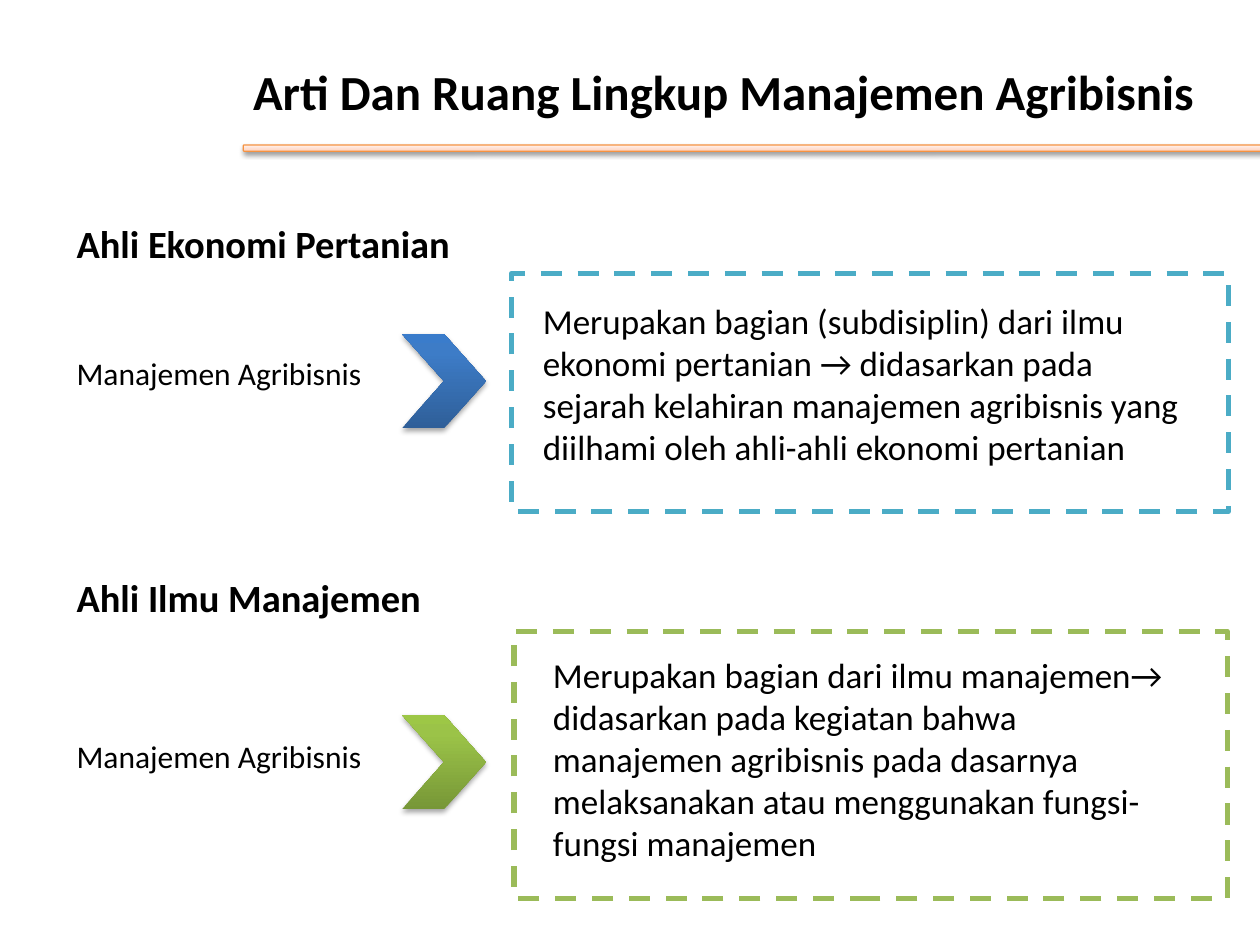
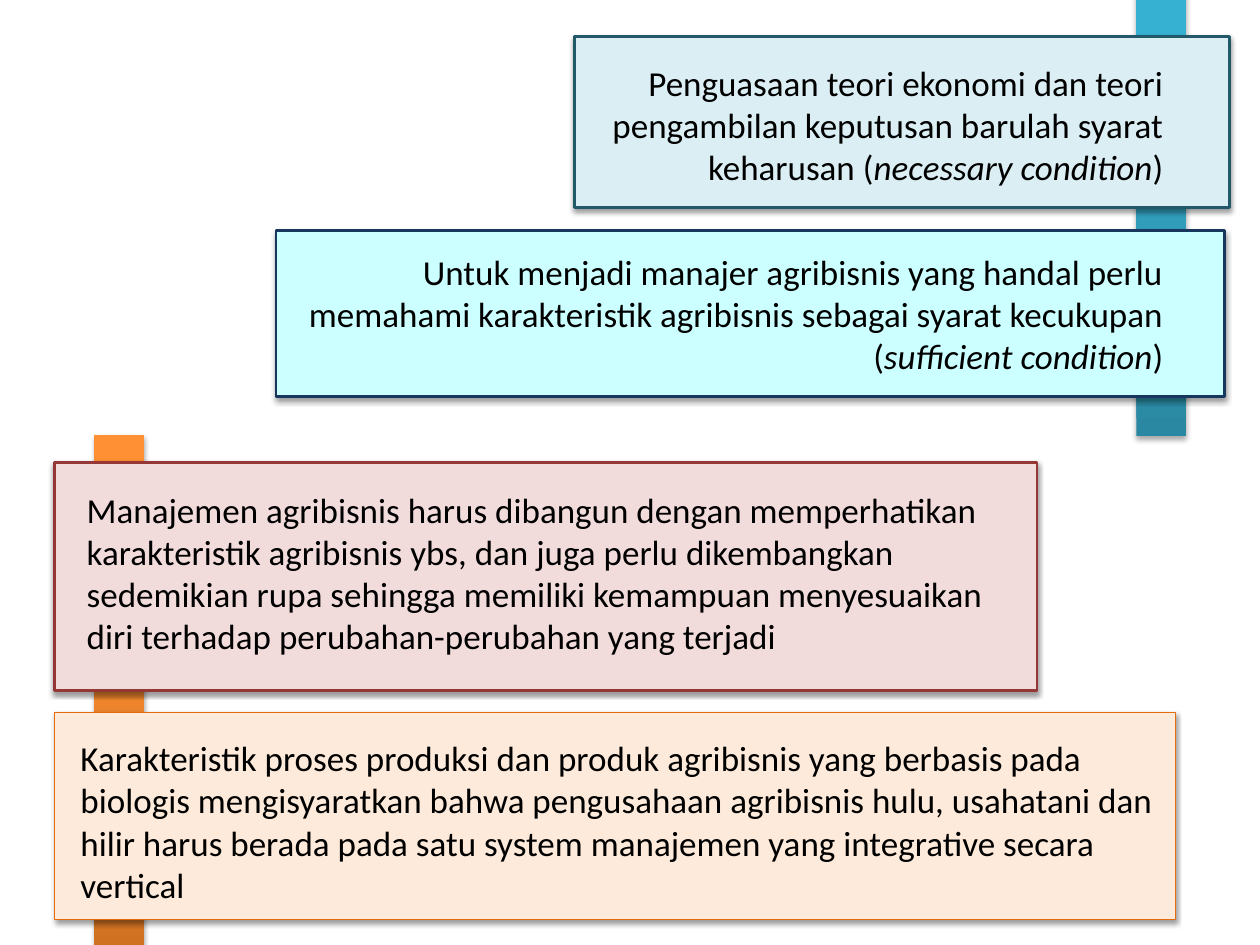
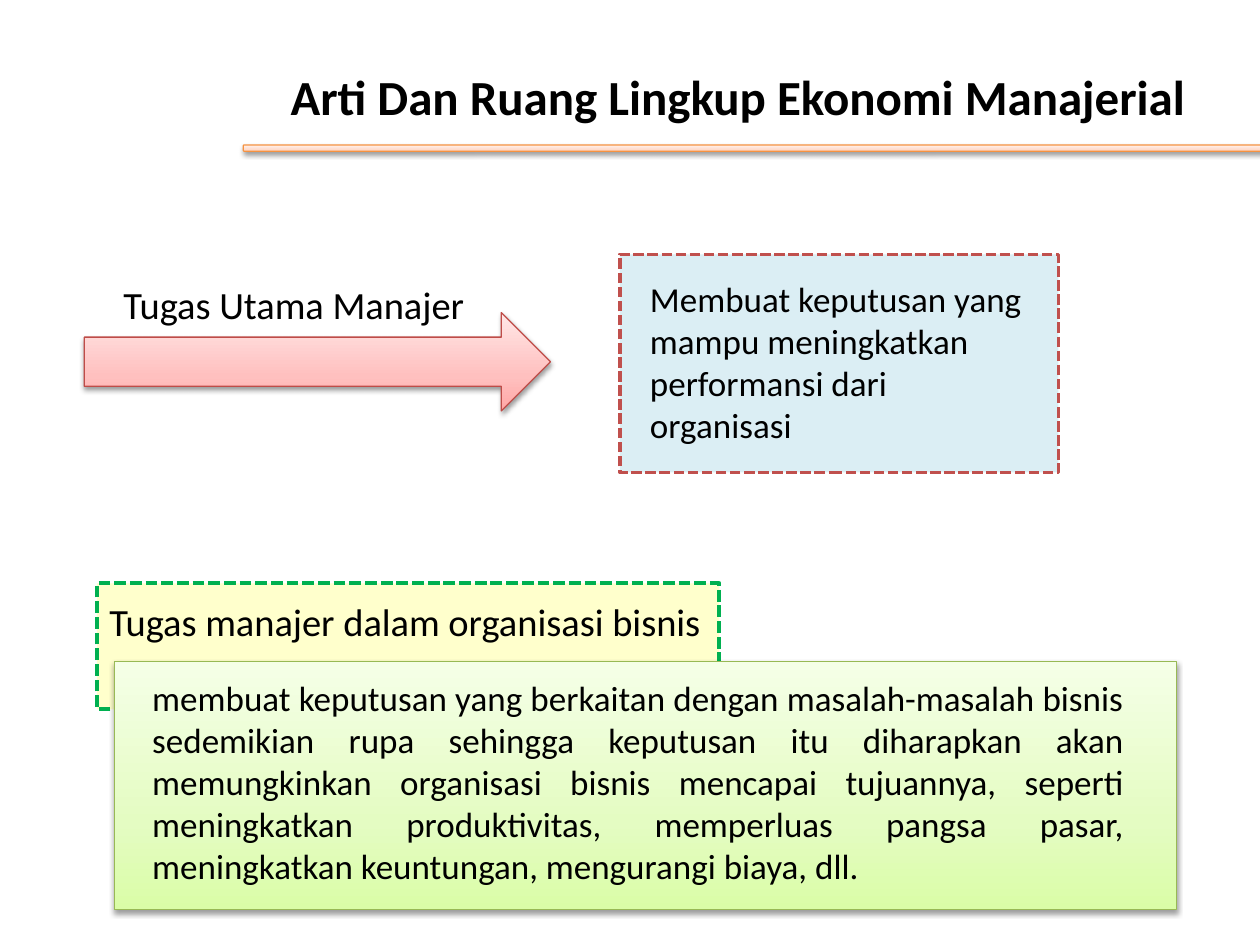
import lxml.etree
import pptx
import pptx.dml.color
import pptx.enum.dml
import pptx.enum.shapes
import pptx.enum.text
import pptx.oxml.ns
import pptx.util

Pt = pptx.util.Pt
KIND = pptx.enum.shapes.MSO_SHAPE
DASH = pptx.enum.dml.MSO_LINE
ALIGN = pptx.enum.text.PP_ALIGN
qn = pptx.oxml.ns.qn

FONT = "Calibri"
HEX = {
    "black": "000000", "white": "FFFFFF",
    "teal": "4BACC6", "olive": "9BBB59", "orange": "F69240",
    "aqua": "CCFFFF", "navy": "17375E", "ice": "DBEEF4", "sea": "215968",
    "peach": "FDEADA", "rust": "E46C0A", "rose": "F2DCDB", "wine": "953735",
    "cream": "FFFFCC", "green": "00B050", "moss": "98B955",
    "red": "C0504D", "brick": "BF4C48",
}
# Gradients run from bottom to top: (percent, colour)
GRADS = {
    "bar": [(0, "FFD2BD"), (35, "FFDED0"), (100, "FFF2ED")],
    "blue": [(0, "2F5F99"), (80, "3D7CC7"), (100, "3A7CCB")],
    "lime": [(0, "779737"), (80, "9BC348"), (100, "9DC746")],
    "cyan": [(0, "2A88A2"), (80, "37B1D2"), (100, "34B4D6")],
    "amber": [(0, "CC6E20"), (80, "FF9034"), (100, "FF9136")],
    "leaf": [(0, "DAFDA7"), (35, "E4FCC2"), (100, "F5FFE7")],
    "pink": [(0, "FFA6A5"), (35, "FFC0BF"), (100, "FFE7E7")],
}


def rgb(name):
    return pptx.dml.color.RGBColor.from_string(HEX[name])


def add_node(base, tag, **attrs):
    return lxml.etree.SubElement(base, qn(tag), {k: str(v) for k, v in attrs.items()})


def blend(shape, stops):
    """Fill a shape with a vertical gradient."""
    shape.fill.gradient()
    shape.fill.gradient_angle = 90
    group = shape._element.spPr.find(qn("a:gradFill")).find(qn("a:gsLst"))
    for old in list(group):
        group.remove(old)
    for spot, tone in stops:
        stop = add_node(group, "a:gs", pos=spot * 1000)
        add_node(stop, "a:srgbClr", val=tone)


def cast(shape, drop, alpha):
    """Give a shape a soft shadow straight below it."""
    group = shape._element.spPr.find(qn("a:effectLst"))
    outer = add_node(group, "a:outerShdw", blurRad=Pt(3.1), dist=Pt(drop),
                     dir=5400000, rotWithShape=0)
    tone = add_node(outer, "a:srgbClr", val=HEX["black"])
    add_node(tone, "a:alpha", val=alpha * 1000)


def add_form(slide, kind, box, fill, line=None, width=0.75, dash=None):
    """Draw a preset shape; dashed ones are flat, the others cast a shadow."""
    shape = slide.shapes.add_shape(kind, *map(Pt, box))
    if fill in GRADS:
        blend(shape, GRADS[fill])
    else:
        shape.fill.solid()
        shape.fill.fore_color.rgb = rgb(fill)
    if line:
        shape.line.color.rgb = rgb(line)
        shape.line.width = Pt(width)
    else:
        shape.line.fill.background()
    if dash:
        shape.line.dash_style = dash
    shape.shadow.inherit = False
    if not dash:
        cast(shape, *((1.6, 38) if line else (1.8, 35)))


def add_text(slide, box, text, size=20, bold=False, align=ALIGN.LEFT, middle=False):
    """Add a text box; words between asterisks are italic."""
    frame = slide.shapes.add_textbox(*map(Pt, box)).text_frame
    frame.word_wrap = True
    if middle:
        frame.vertical_anchor = pptx.enum.text.MSO_ANCHOR.MIDDLE
    para = frame.paragraphs[0]
    para.alignment = align
    for i, part in enumerate(text.split("*")):
        run = para.add_run()
        run.text = part
        run.font.name = FONT
        run.font.size = Pt(size)
        run.font.bold = bold
        run.font.italic = i % 2 == 1
        run.font.color.rgb = rgb("black")


def add_title(slide, box, text):
    """Add the title and the rule below it."""
    add_text(slide, box, text, 28, True, ALIGN.RIGHT, True)
    add_form(slide, KIND.ROUNDED_RECTANGLE, (139, 82.8, 602, 3.6), "bar", "orange")


def add_view(slide, head, top, label, chevron, fill, frame, line, box, text):
    """Add one school of thought: heading, label, chevron and framed text."""
    add_form(slide, KIND.RECTANGLE, frame, "white", line, 3, DASH.DASH)
    add_text(slide, (36.7, top, 230, 34), head, 22, True)
    add_text(slide, (36.7, label, 180, 29), "Manajemen Agribisnis", 18)
    add_form(slide, KIND.CHEVRON, (229.7, chevron, 48, 54), fill)
    add_text(slide, box, text)


def show_scope(slide):
    add_title(slide, (41, 21.6, 648, 61.2), "Arti Dan Ruang Lingkup Manajemen Agribisnis")
    add_view(slide, "Ahli Ekonomi Pertanian", 122.4, 198.7, 190.8, "blue",
             (292.3, 156.2, 409.7, 136), "teal", (303.1, 167.8, 386, 118.8),
             "Merupakan bagian (subdisiplin) dari ilmu ekonomi pertanian → didasarkan "
             "pada sejarah kelahiran manajemen agribisnis yang diilhami oleh ahli-ahli "
             "ekonomi pertanian")
    add_view(slide, "Ahli Ilmu Manajemen", 324.7, 417.6, 408.5, "lime",
             (293.8, 360.7, 407.5, 152.7), "olive", (308.9, 370, 380.1, 128.2),
             "Merupakan bagian dari ilmu manajemen→ didasarkan pada kegiatan bahwa "
             "manajemen agribisnis pada dasarnya melaksanakan atau menggunakan "
             "fungsi-fungsi manajemen")


def show_traits(slide):
    # Vertical bars behind the panels
    add_form(slide, KIND.RECTANGLE, (649.4, -46, 28.4, 295), "cyan")
    add_form(slide, KIND.RECTANGLE, (54, 248.5, 28.4, 316), "amber")

    # Panels: frame, fill, line, width, text box, alignment, text
    panels = [
        ((157.7, 131.7, 542.2, 95), "aqua", "navy", 1.5,
         (162, 139.7, 509.8, 83.5), ALIGN.RIGHT,
         "Untuk menjadi manajer agribisnis yang handal perlu memahami karakteristik "
         "agribisnis sebagai syarat kecukupan (*sufficient condition*)"),
        ((328.3, 20.9, 374.4, 97.9), "ice", "sea", 1.5,
         (331.9, 31.7, 339.9, 80), ALIGN.RIGHT,
         "Penguasaan teori ekonomi dan teori pengambilan keputusan barulah syarat "
         "keharusan (*necessary condition*)"),
        ((31, 407.3, 640.8, 118), "peach", "rust", 0.75,
         (38.9, 417.6, 648, 108), ALIGN.LEFT,
         "Karakteristik proses produksi dan produk agribisnis yang berbasis pada "
         "biologis mengisyaratkan bahwa pengusahaan agribisnis hulu, usahatani dan "
         "hilir harus berada pada satu system manajemen yang integrative secara vertical"),
        ((31, 264.2, 561.6, 130.3), "rose", "wine", 1.5,
         (42.5, 275.8, 532.8, 104.4), ALIGN.LEFT,
         "Manajemen agribisnis harus dibangun dengan memperhatikan karakteristik "
         "agribisnis ybs, dan juga perlu dikembangkan sedemikian rupa sehingga memiliki "
         "kemampuan menyesuaikan diri terhadap perubahan-perubahan yang terjadi"),
    ]
    for frame, fill, line, width, box, align, text in panels:
        add_form(slide, KIND.RECTANGLE, frame, fill, line, width)
        add_text(slide, box, text, align=align)


def show_tasks(slide):
    add_title(slide, (36, 33.1, 648, 44), "Arti Dan Ruang Lingkup Ekonomi Manajerial")

    # Main task
    add_form(slide, KIND.RIGHT_ARROW, (48.2, 178.6, 266.4, 56.2), "pink", "brick")
    add_text(slide, (63.4, 157, 216.7, 34), "Tugas Utama Manajer", 22)
    add_form(slide, KIND.RECTANGLE, (354.2, 145.4, 250.6, 124.6), "ice", "red", 2,
             DASH.SQUARE_DOT)
    add_text(slide, (364.3, 154.8, 226.8, 104.4),
             "Membuat keputusan yang mampu meningkatkan performansi dari organisasi")

    # Task in a business
    add_form(slide, KIND.RECTANGLE, (55.4, 333.4, 355.7, 72), "cream", "green", 2.25,
             DASH.SQUARE_DOT)
    add_text(slide, (55.4, 338.4, 366.5, 34), "Tugas manajer dalam organisasi bisnis", 22)
    add_form(slide, KIND.RECTANGLE, (65.5, 378, 607, 141.8), "leaf", "moss")
    add_text(slide, (79.9, 383, 569.5, 130.3),
             "membuat keputusan yang berkaitan dengan masalah-masalah bisnis sedemikian "
             "rupa sehingga keputusan itu diharapkan akan memungkinkan organisasi bisnis "
             "mencapai tujuannya, seperti meningkatkan produktivitas, memperluas pangsa "
             "pasar, meningkatkan keuntungan, mengurangi biaya, dll.",
             align=ALIGN.JUSTIFY)


def main():
    deck = pptx.Presentation()
    deck.slide_width, deck.slide_height = Pt(720), Pt(540)
    for show in (show_scope, show_traits, show_tasks):
        show(deck.slides.add_slide(deck.slide_layouts[6]))
    deck.save("out.pptx")


if __name__ == "__main__":
    main()
